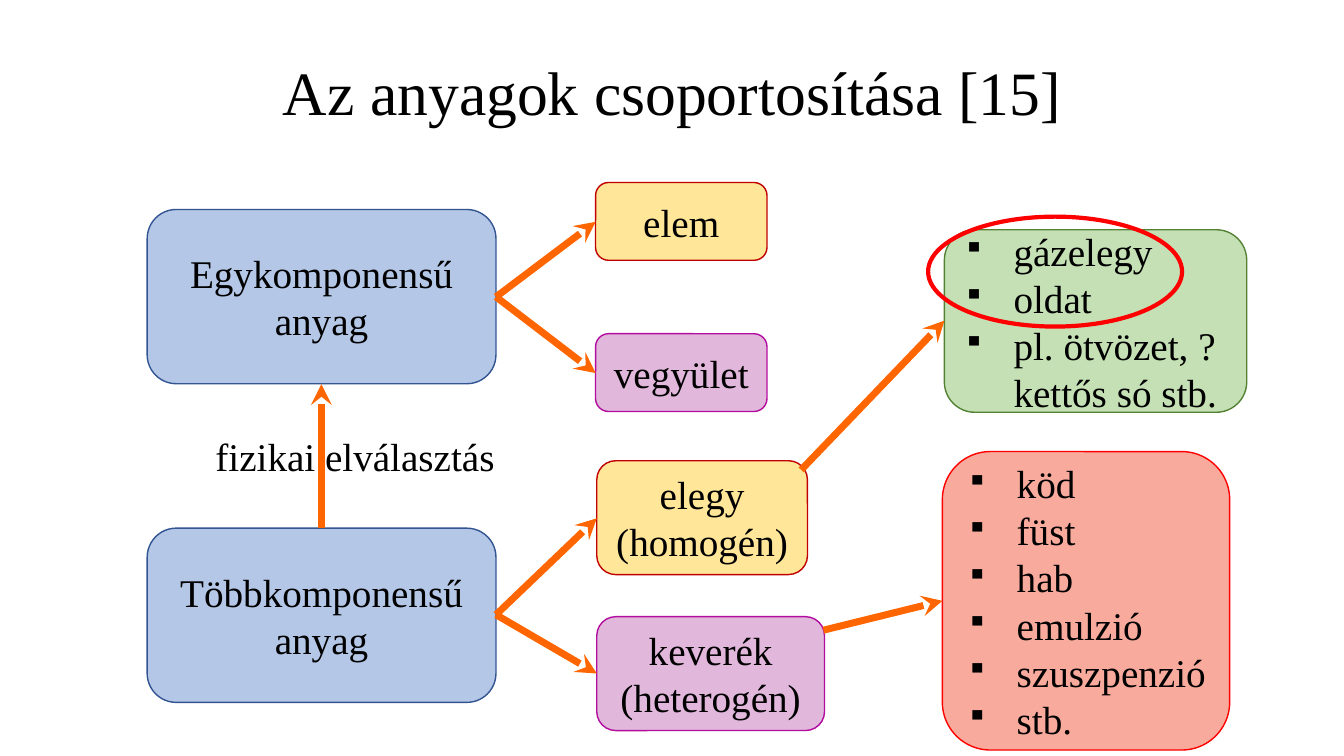
"""Build the slide on the classification of materials."""
import pptx
import pptx.dml.color
import pptx.enum.shapes
import pptx.enum.text
import pptx.oxml
import pptx.oxml.ns
import pptx.util

Cm, Pt = pptx.util.Cm, pptx.util.Pt
SHAPE = pptx.enum.shapes.MSO_SHAPE
ALIGN = pptx.enum.text.PP_ALIGN
ANCHOR = pptx.enum.text.MSO_ANCHOR
FONT = "Times New Roman"
COLORS = {
    "text": "000000", "arrow": "FF6600", "highlight": "FF0000",
    "blue": "B4C7E7", "blue_line": "325491",
    "yellow": "FFE699", "yellow_line": "C00000",
    "purple": "E1B7DC", "purple_line": "B30D9F",
    "red": "F8AB9C", "red_line": "FF0000",
    "green": "C5E0B4", "green_line": "548235",
}
BOXES = [
    ("Egykomponensű anyag", "blue", (3.71, 5.28, 8.79, 4.39)),
    ("Többkomponensű anyag", "blue", (3.71, 13.31, 8.79, 4.39)),
    ("elem", "yellow", (15.01, 4.6, 4.32, 1.96)),
    ("vegyület", "purple", (15.01, 8.41, 4.32, 1.96)),
    ("elegy\n(homogén)", "yellow", (15.04, 11.61, 5.31, 2.87)),
    ("keverék\n(heterogén)", "purple", (15.04, 15.54, 5.74, 2.87)),
]
LISTS = [
    (["köd", "füst", "hab", "emulzió", "szuszpenzió", "stb."],
     "red", (23.75, 11.38, 7.24, 7.52)),
    (["gázelegy", "oldat", "pl. ötvözet, ?\nkettős só stb."],
     "green", (23.8, 5.79, 7.62, 4.6)),
]
ARROWS = [
    ((12.5, 15.49), (15.04, 13.06)),
    ((12.5, 15.49), (15.04, 16.97)),
    ((12.5, 7.48), (15.01, 9.4)),
    ((12.5, 7.48), (15.01, 5.59)),
    ((8.1, 13.31), (8.1, 9.68)),
    ((20.75, 15.88), (23.75, 15.14)),
    ((20.19, 11.84), (23.8, 8.08)),
]


def rgb(name):
    """Return the named colour."""
    return pptx.dml.color.RGBColor.from_string(COLORS[name])


def cm(values):
    """Return the values as lengths."""
    return [Cm(v) for v in values]


def add_xml(parent, tag, **attrs):
    """Append a drawing element to the parent."""
    el = pptx.oxml.parse_xml(f"<a:{tag} {pptx.oxml.ns.nsdecls('a')}/>")
    for key, value in attrs.items():
        el.set(key, value)
    parent.append(el)


def write(p, text, size=28, align=ALIGN.CENTER, bullet=None):
    """Write formatted text into a paragraph."""
    p.text = text
    p.alignment = align
    for r in p.runs:
        r.font.size = Pt(size)
        r.font.name = FONT
        r.font.color.rgb = rgb("text")
    if bullet:
        pPr = p._p.get_or_add_pPr()
        pPr.set("marL", str(Cm(1.27)))
        pPr.set("indent", str(Cm(-1.27)))
        add_xml(pPr, "buSzPct", val="75000")
        add_xml(pPr, "buChar", char=bullet)


def add_title(s, text):
    """Fill and place the title."""
    sp = s.shapes.title
    sp.left, sp.top, sp.width, sp.height = cm((2.34, 0.56, 29.21, 3.68))
    tf = sp.text_frame
    tf.vertical_anchor = ANCHOR.MIDDLE
    tf.auto_size = pptx.enum.text.MSO_AUTO_SIZE.NONE
    write(tf.paragraphs[0], text, size=44)
    tf.paragraphs[0].line_spacing = 0.9


def add_label(s, text, place):
    """Add text without a frame."""
    tf = s.shapes.add_textbox(*cm(place)).text_frame
    tf.word_wrap = False
    write(tf.paragraphs[0], text, align=ALIGN.LEFT)


def add_box(s, items, color, place, margin_right=0.25, **fmt):
    """Add a rounded box with one paragraph for each item."""
    sp = s.shapes.add_shape(SHAPE.ROUNDED_RECTANGLE, *cm(place))
    sp.shadow.inherit = False
    sp.fill.solid()
    sp.fill.fore_color.rgb = rgb(color)
    sp.line.color.rgb = rgb(color + "_line")
    sp.line.width = Pt(1)
    tf = sp.text_frame
    tf.word_wrap = True
    tf.margin_right = Cm(margin_right)
    tf.vertical_anchor = ANCHOR.MIDDLE
    for i, item in enumerate(items):
        p = tf.add_paragraph() if i else tf.paragraphs[0]
        write(p, item, **fmt)


def add_arrow(s, start, end):
    """Add an arrow between two points."""
    line = s.shapes.add_connector(
        pptx.enum.shapes.MSO_CONNECTOR.STRAIGHT, *cm(start + end))
    line.line.color.rgb = rgb("arrow")
    line.line.width = Pt(5)
    add_xml(line.line._get_or_add_ln(), "tailEnd", type="stealth")
    add_xml(line._element.spPr, "effectLst")


def add_highlight(s, place):
    """Add an unfilled ellipse."""
    sp = s.shapes.add_shape(SHAPE.OVAL, *cm(place))
    sp.shadow.inherit = False
    sp.fill.background()
    sp.line.color.rgb = rgb("highlight")
    sp.line.width = Pt(3)


def main():
    """Build and save the slide."""
    prs = pptx.Presentation()
    prs.slide_width, prs.slide_height = cm((33.87, 19.05))
    s = prs.slides.add_slide(prs.slide_layouts.get_by_name("Title Only"))
    add_title(s, "Az anyagok csoportosítása [15]")
    add_label(s, "fizikai elválasztás", (5.18, 10.77, 7.62, 1.45))
    for text, color, place in BOXES:
        add_box(s, [text], color, place)
    for items, color, place in LISTS:
        add_box(s, items, color, place, margin_right=0,
                align=ALIGN.LEFT, bullet="▪")
    for start, end in ARROWS:
        add_arrow(s, start, end)
    add_highlight(s, (23.39, 5.46, 6.4, 2.77))
    prs.save("out.pptx")


if __name__ == "__main__":
    main()
